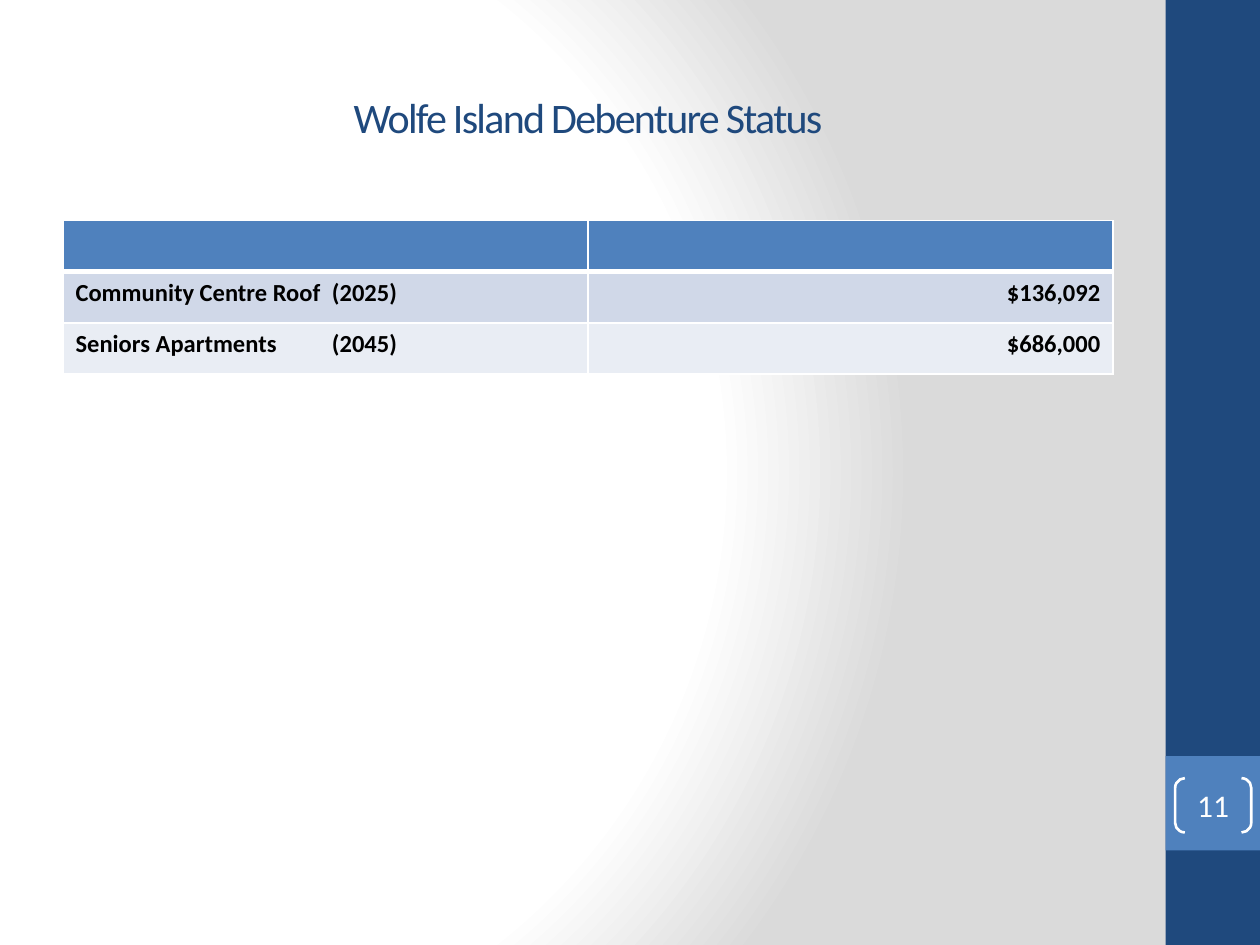
from lxml.etree import SubElement
from pptx import Presentation
from pptx.dml.color import RGBColor
from pptx.enum.shapes import MSO_SHAPE
from pptx.enum.text import MSO_ANCHOR, PP_ALIGN
from pptx.oxml import parse_xml
from pptx.oxml.ns import nsdecls, qn
from pptx.util import Pt

COLORS = {
    "navy": "1F497D",
    "blue": "4F81BD",
    "white": "FFFFFF",
    "black": "000000",
    "gray": "DADADA",
    "band_dark": "D0D8E8",
    "band_light": "E9EDF4",
}
FONT = "Calibri"
ROWS = [
    ("", "", "blue"),
    ("Community Centre Roof\t(2025)", "$136,092", "band_dark"),
    ("Seniors Apartments\t(2045)", "$686,000", "band_light"),
]


def rgb(name):
    return RGBColor.from_string(COLORS[name])


def add_span(para, text, size, color, bold=False):
    span = para.add_run()
    span.text = text
    span.font.name = FONT
    span.font.size = Pt(size)
    span.font.bold = bold
    span.font.color.rgb = rgb(color)
    return span


def set_background(page):
    stops = "".join(
        f'<a:gs pos="{position * 1000}"><a:srgbClr val="{COLORS[name]}"/></a:gs>'
        for position, name in [(0, "white"), (75, "white"), (100, "gray")]
    )
    gradient = parse_xml(
        f'<a:gradFill {nsdecls("a")} rotWithShape="1"><a:gsLst>{stops}</a:gsLst>'
        '<a:path path="circle"><a:fillToRect l="20000" t="50000" r="100000" b="50000"/>'
        "</a:path></a:gradFill>"
    )
    fill = page.background.fill
    fill.solid()
    properties = page.element.cSld.bg.bgPr
    properties.replace(properties.find(qn("a:solidFill")), gradient)


def add_block(page, left, top, width, height, color):
    block = page.shapes.add_shape(
        MSO_SHAPE.RECTANGLE, Pt(left), Pt(top), Pt(width), Pt(height)
    )
    block.shadow.inherit = False
    block.fill.solid()
    block.fill.fore_color.rgb = rgb(color)
    block.line.fill.background()


def set_title(page, text):
    title = page.shapes.title
    title.left, title.top, title.width, title.height = Pt(36), Pt(21.6), Pt(600), Pt(90)
    title.text_frame.vertical_anchor = MSO_ANCHOR.MIDDLE
    para = title.text_frame.paragraphs[0]
    para.alignment = PP_ALIGN.CENTER
    span = add_span(para, text, 24, "navy")
    span.font._element.set("spc", "-100")


def set_borders(cell, top, bottom):
    properties = cell._tc.get_or_add_tcPr()
    sides = [("lnL", 1), ("lnR", 1), ("lnT", top), ("lnB", bottom)]
    for index, (side, width) in enumerate(sides):
        line = parse_xml(f'<a:{side} {nsdecls("a")} w="{Pt(width)}"/>')
        fill = SubElement(line, qn("a:solidFill"))
        SubElement(fill, qn("a:srgbClr"), val=COLORS["white"])
        properties.insert(index, line)


def set_tab_stop(para, position):
    stops = SubElement(para._p.get_or_add_pPr(), qn("a:tabLst"))
    SubElement(stops, qn("a:tab"), pos=str(Pt(position)), algn="l")


def add_status_table(page):
    table = page.shapes.add_table(
        len(ROWS), 2, Pt(36), Pt(126), Pt(600), Pt(87.9)
    ).table
    for row_index, (label, amount, color) in enumerate(ROWS):
        for column_index, text in enumerate((label, amount)):
            cell = table.cell(row_index, column_index)
            cell.fill.solid()
            cell.fill.fore_color.rgb = rgb(color)
            set_borders(
                cell, 3 if row_index == 1 else 1, 3 if row_index == 0 else 1
            )
            para = cell.text_frame.paragraphs[0]
            if column_index == 1:
                para.alignment = PP_ALIGN.RIGHT
            elif text:
                set_tab_stop(para, 146.5)
            if text:
                add_span(para, text, 14, "black", bold=True)


def add_page_number(page, number):
    bracket = page.shapes.add_shape(
        MSO_SHAPE.DOUBLE_BRACKET, Pt(671.5), Pt(444.7), Pt(43.5), Pt(31)
    )
    bracket.shadow.inherit = False
    bracket.adjustments[0] = 0.18
    bracket.fill.background()
    bracket.line.color.rgb = rgb("white")
    bracket.line.width = Pt(1.5)
    frame = bracket.text_frame
    frame.margin_left = frame.margin_right = frame.margin_top = frame.margin_bottom = 0
    frame.vertical_anchor = MSO_ANCHOR.MIDDLE
    para = frame.paragraphs[0]
    para.alignment = PP_ALIGN.CENTER
    add_span(para, number, 18, "white")


def main():
    deck = Presentation()
    deck.slide_width, deck.slide_height = Pt(720), Pt(540)
    page = deck.slides.add_slide(deck.slide_layouts[5])
    set_background(page)
    add_block(page, 666, 0, 54, 540, "navy")
    add_block(page, 666, 432, 54, 54, "blue")
    set_title(page, "Wolfe Island Debenture Status")
    add_status_table(page)
    add_page_number(page, "11")
    deck.save("out.pptx")


if __name__ == "__main__":
    main()
